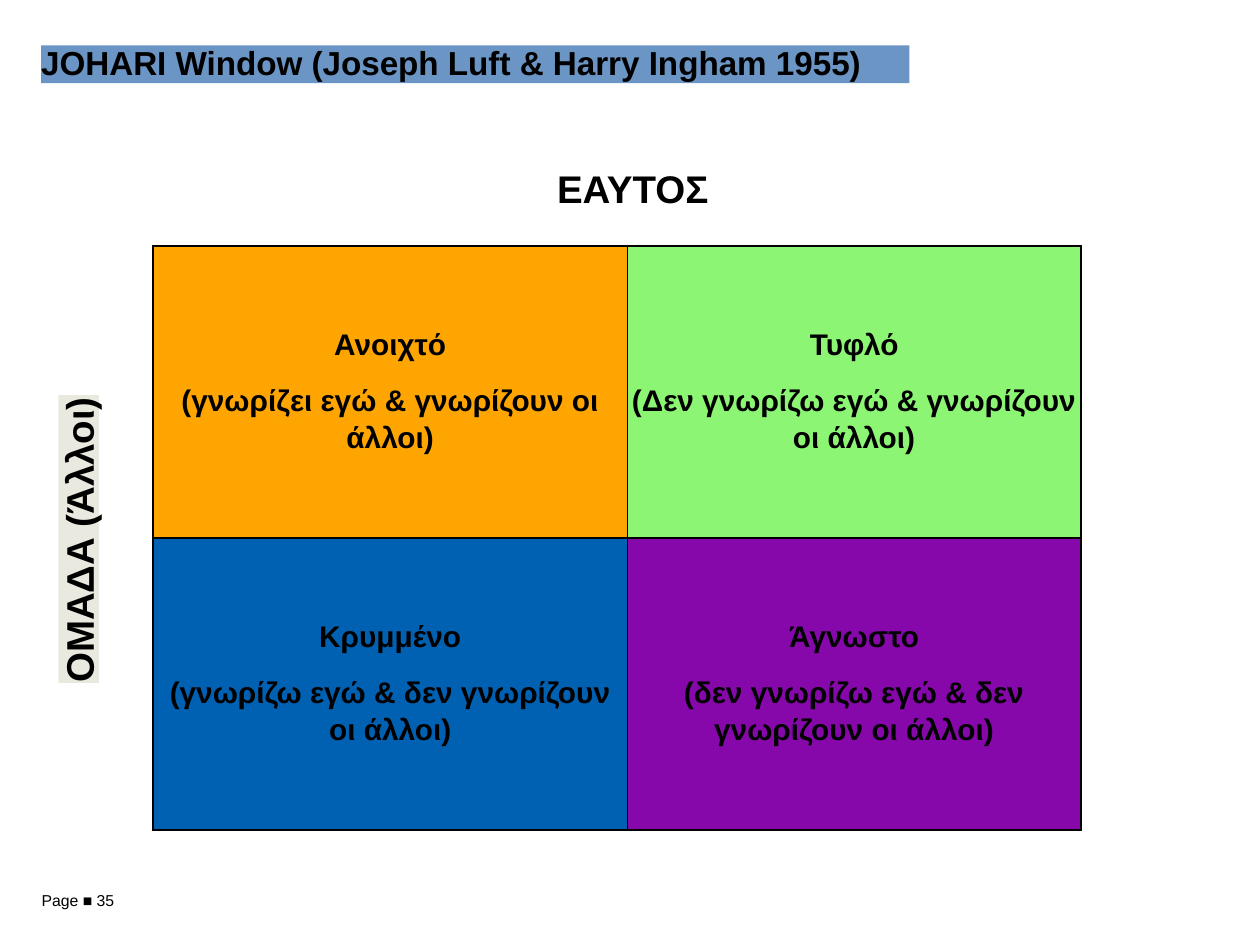
from lxml import etree
from pptx import Presentation
from pptx.dml.color import RGBColor
from pptx.enum import text
from pptx.oxml.ns import qn
from pptx.util import Pt

BLACK = RGBColor(0, 0, 0)
BLUE = RGBColor(0x6A, 0x95, 0xC4)
BEIGE = RGBColor(0xEA, 0xE9, 0xDF)
ORANGE = RGBColor(0xFE, 0xA5, 0x01)
GREEN = RGBColor(0x8C, 0xF5, 0x74)
NAVY = RGBColor(0x00, 0x61, 0xB2)
PURPLE = RGBColor(0x86, 0x08, 0xAA)

PANES = [
    [("Ανοιχτό", "(γνωρίζει εγώ & γνωρίζουν οι άλλοι)", ORANGE),
     ("Τυφλό", "(Δεν γνωρίζω εγώ & γνωρίζουν οι άλλοι)", GREEN)],
    [("Κρυμμένο", "(γνωρίζω εγώ & δεν γνωρίζουν οι άλλοι)", NAVY),
     ("Άγνωστο", "(δεν γνωρίζω εγώ & δεν γνωρίζουν οι άλλοι)", PURPLE)],
]


def style(para, size, line, bold=True):
    font = para.font
    font.name, font.size, font.bold = "Arial", Pt(size), bold
    font.color.rgb = BLACK
    para.line_spacing = Pt(line)


def paint(part, color):
    part.fill.solid()
    part.fill.fore_color.rgb = color


def label(slide, words, box, size, line, bold=True, fill=None, turned=False):
    shape = slide.shapes.add_textbox(*map(Pt, box))
    frame = shape.text_frame
    frame.margin_left = frame.margin_right = 0
    frame.margin_top = frame.margin_bottom = 0
    frame.word_wrap = False
    frame.text = words
    style(frame.paragraphs[0], size, line, bold)
    if fill is not None:
        paint(shape, fill)
    if turned:
        frame._txBody.bodyPr.set("vert", "vert270")


def border(cell, widths):
    props = cell._tc.get_or_add_tcPr()
    for spot, (side, width) in enumerate(widths.items()):
        edge = etree.Element(qn(f"a:{side}"), w=str(Pt(width)))
        fill = etree.SubElement(edge, qn("a:solidFill"))
        etree.SubElement(fill, qn("a:srgbClr"), val=str(BLACK))
        props.insert(spot, edge)


def pane(cell, name, note, color):
    cell.margin_left = cell.margin_right = 0
    cell.margin_top = cell.margin_bottom = 0
    cell.vertical_anchor = text.MSO_ANCHOR.MIDDLE
    cell.text = f"{name}\n{note}"
    head, body = cell.text_frame.paragraphs
    style(head, 17, 19)
    style(body, 17, 21.4)
    head.space_after = Pt(10.5)
    head.alignment = body.alignment = text.PP_ALIGN.CENTER
    paint(cell, color)


def window(slide, left, top, cols, high):
    rows = len(PANES)
    frame = slide.shapes.add_table(rows, len(cols), Pt(left), Pt(top),
                                   Pt(sum(cols)), Pt(rows * high))
    table = frame.table
    table.first_row = table.horz_banding = False
    for col, wide in zip(table.columns, cols):
        col.width = Pt(wide)
    for r, line in enumerate(PANES):
        table.rows[r].height = Pt(high)
        for c, parts in enumerate(line):
            cell = table.cell(r, c)
            pane(cell, *parts)
            # The inner upright is thinner than the other lines
            border(cell, {"lnL": 0.75 if c else 1.25,
                          "lnR": 1.25 if c else 0.75,
                          "lnT": 1.25, "lnB": 1.25})


def main():
    prs = Presentation()
    prs.slide_width, prs.slide_height = Pt(720), Pt(540)
    slide = prs.slides.add_slide(prs.slide_layouts[6])

    # Title and axis names
    label(slide, "ΟΜΑΔΑ (Άλλοι)", (33.4, 225.8, 23.2, 164.4), 22, 24.6,
          fill=BEIGE, turned=True)
    label(slide, "JOHARI Window (Joseph Luft & Harry Ingham 1955)",
          (23.5, 25.9, 496.2, 21.6), 19, 21.2, fill=BLUE)
    label(slide, "ΕΑΥΤΟΣ", (318.4, 96.2, 92, 19.4), 22, 24.6)

    # Four panes
    window(slide, 87.4, 140.5, (271.2, 259), 166.9)

    # Page number
    label(slide, "Page ■ 35", (23.8, 509.8, 48, 12.2), 9, 10, bold=False)

    prs.save("out.pptx")


if __name__ == "__main__":
    main()
